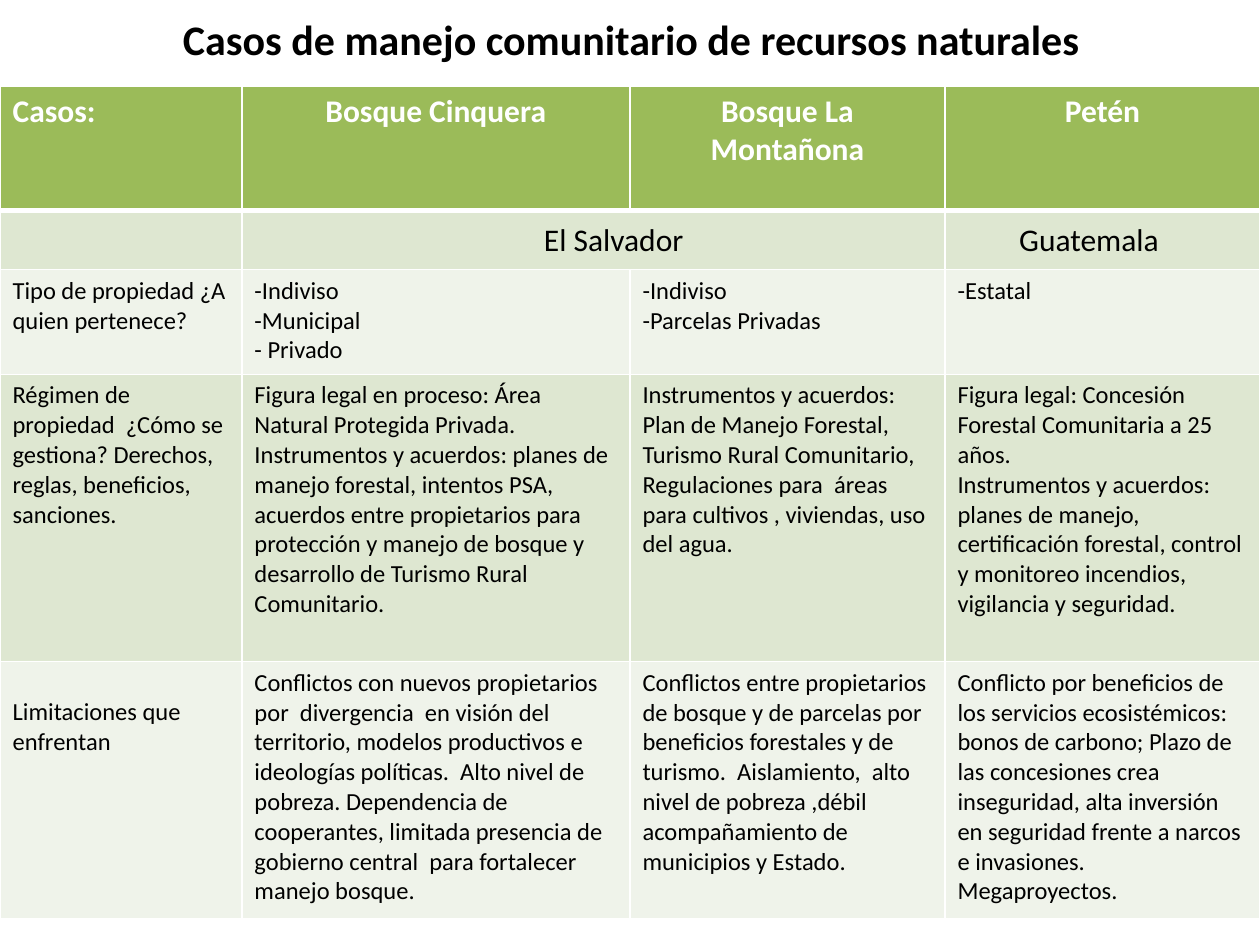
from lxml import etree
from pptx import Presentation
from pptx.dml.color import RGBColor
from pptx.enum import text
from pptx.oxml import ns
from pptx.util import Pt

# Content: each cell is a list of paragraphs
TITLE = "Casos de manejo comunitario de recursos naturales"
ROWS = [
    [["Casos:"], ["Bosque Cinquera"], ["Bosque La Montañona"], ["Petén"]],
    [[], [], [], []],
    [["Tipo de propiedad ¿A quien pertenece?"],
     ["-Indiviso", "-Municipal", "- Privado"],
     ["-Indiviso", "-Parcelas Privadas"],
     ["-Estatal"]],
    [["Régimen de propiedad  ¿Cómo se gestiona? Derechos, reglas, beneficios, sanciones."],
     ["Figura legal en proceso: Área Natural Protegida Privada.",
      "Instrumentos y acuerdos: planes de manejo forestal, intentos PSA, acuerdos entre "
      "propietarios para protección y manejo de bosque y desarrollo de Turismo Rural Comunitario."],
     ["Instrumentos y acuerdos:",
      "Plan de Manejo Forestal, Turismo Rural Comunitario,  Regulaciones para  áreas para "
      "cultivos , viviendas, uso del agua."],
     ["Figura legal: Concesión Forestal Comunitaria a 25 años.",
      "Instrumentos y acuerdos: planes de manejo, certificación forestal, control y monitoreo "
      "incendios, vigilancia y seguridad."]],
    [["Limitaciones que enfrentan"],
     ["Conflictos con nuevos propietarios por  divergencia  en visión del territorio, modelos "
      "productivos e  ideologías políticas.  Alto nivel de pobreza. Dependencia de cooperantes, "
      "limitada presencia de gobierno central  para fortalecer manejo bosque."],
     ["Conflictos entre propietarios de bosque y de parcelas por beneficios forestales y de "
      "turismo.  Aislamiento,  alto nivel de pobreza ,débil acompañamiento de municipios y Estado."],
     ["Conflicto por beneficios de los servicios ecosistémicos: bonos de carbono; Plazo de las "
      "concesiones crea inseguridad, alta inversión en seguridad frente a narcos e invasiones. "
      "Megaproyectos."]],
]

THEME = {
    "font": "Calibri", "ink": "000000", "white": "FFFFFF", "header": "9BBB59",
    "bands": ("EFF3EA", "DEE7D1"), "title": 24, "heading": 18, "body": 14,
    "rule": 1, "header_rule": 3,
}
COLUMN_WIDTHS = (138.24, 221.76, 180, 180)
ROW_HEIGHTS = (71.3, 33.8, 59.8, 164.2, 146.9)
TABLE_TOP = 49
LIMITS_TOP_MARGIN = 20.6  # lowers the last row label by one line
LEFT, CENTER = text.PP_ALIGN.LEFT, text.PP_ALIGN.CENTER

# Free text: words, box, size, bold, alignment
LABELS = [
    (TITLE, (54.7, -13.7, 612, 72), THEME["title"], True, CENTER),
    ("El Salvador", (247, 122.4, 207.4, 28.8), THEME["heading"], False, CENTER),
    ("Guatemala", (575.3, 122.4, 106.6, 28.8), THEME["heading"], False, LEFT),
]


def write(frame, paragraphs, size, color, bold, align):
    frame.text = "\n".join(paragraphs)
    formats = {"name": THEME["font"], "size": Pt(size), "bold": bold}
    for paragraph in frame.paragraphs:
        paragraph.alignment = align
        for key, value in formats.items():
            setattr(paragraph.font, key, value)
        paragraph.font.color.rgb = RGBColor.from_string(color)
        for run in paragraph.runs:
            for key, value in formats.items():
                setattr(run.font, key, value)
            run.font.color.rgb = RGBColor.from_string(color)


def add_borders(cell, widths):
    properties = cell._tc.get_or_add_tcPr()
    for side, width in widths.items():
        line = etree.SubElement(properties, ns.qn(f"a:ln{side}"), w=str(Pt(width)))
        fill = etree.SubElement(line, ns.qn("a:solidFill"))
        etree.SubElement(fill, ns.qn("a:srgbClr"), val=THEME["white"])


def add_cases_table(slide):
    table = slide.shapes.add_table(
        len(ROWS), len(COLUMN_WIDTHS), 0, Pt(TABLE_TOP),
        Pt(sum(COLUMN_WIDTHS)), Pt(sum(ROW_HEIGHTS))).table
    for column, width in zip(table.columns, COLUMN_WIDTHS):
        column.width = Pt(width)
    for row, height in zip(table.rows, ROW_HEIGHTS):
        row.height = Pt(height)
    for r, row in enumerate(ROWS):
        header = r == 0
        for c, paragraphs in enumerate(row):
            cell = table.cell(r, c)
            size = THEME["heading" if header else "body"]
            color = THEME["white" if header else "ink"]
            write(cell.text_frame, paragraphs, size, color, header,
                  CENTER if header and c else LEFT)
            widths = dict.fromkeys("LRTB", THEME["rule"])
            if r < 2:
                widths["B" if header else "T"] = THEME["header_rule"]
            add_borders(cell, widths)
            cell.fill.solid()
            cell.fill.fore_color.rgb = RGBColor.from_string(
                THEME["header"] if header else THEME["bands"][r % 2])
    # El Salvador covers both of its forests
    table.cell(1, 1).merge(table.cell(1, 2))
    table.cell(len(ROWS) - 1, 0).margin_top = Pt(LIMITS_TOP_MARGIN)


def add_label(slide, words, box, size, bold, align):
    frame = slide.shapes.add_textbox(*map(Pt, box)).text_frame
    frame.word_wrap = True
    frame.vertical_anchor = text.MSO_ANCHOR.MIDDLE
    write(frame, [words], size, THEME["ink"], bold, align)


def main():
    deck = Presentation()
    deck.slide_width, deck.slide_height = Pt(720), Pt(540)
    slide = deck.slides.add_slide(deck.slide_layouts[6])
    add_cases_table(slide)
    # Title and country names
    for label in LABELS:
        add_label(slide, *label)
    deck.save("out.pptx")


if __name__ == "__main__":
    main()
